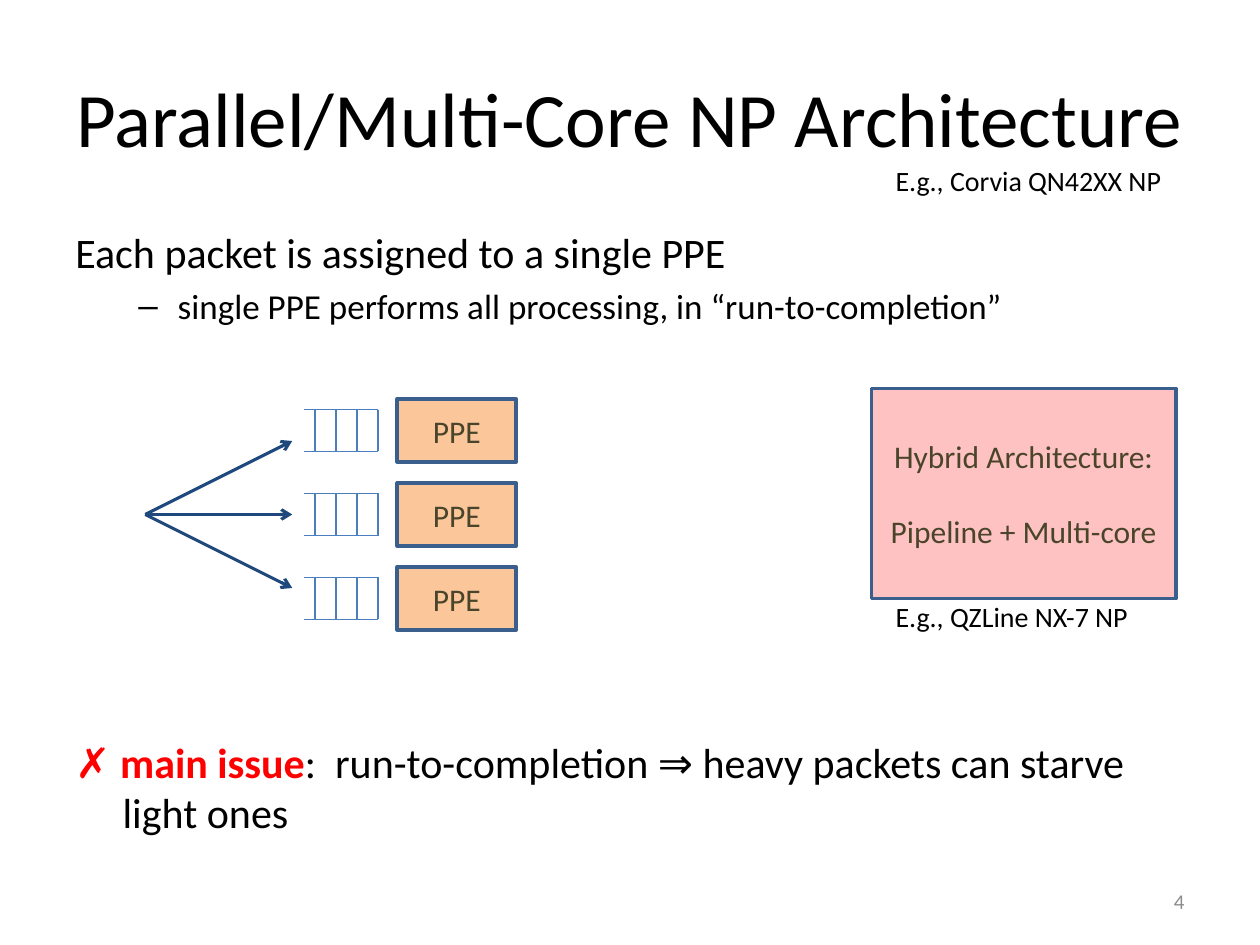
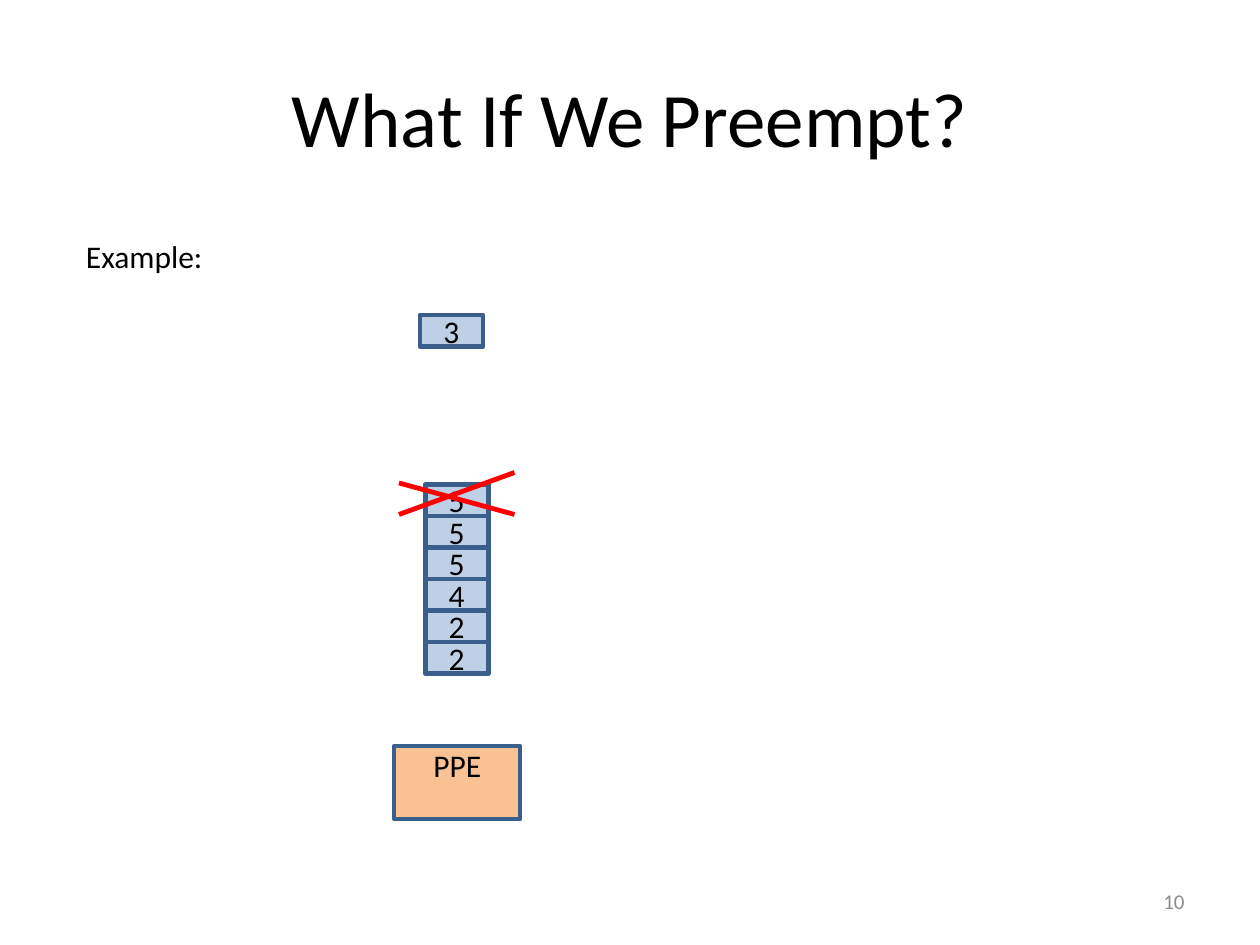
import lxml.etree
import pptx
import pptx.dml.color
import pptx.enum.shapes
import pptx.enum.text
import pptx.oxml.ns
import pptx.util

Pt = pptx.util.Pt
qn = pptx.oxml.ns.qn
Align = pptx.enum.text.PP_ALIGN
Anchor = pptx.enum.text.MSO_ANCHOR
RECT = pptx.enum.shapes.MSO_SHAPE.RECTANGLE
STRAIGHT = pptx.enum.shapes.MSO_CONNECTOR.STRAIGHT

COLORS = {
    "ink": "000000",
    "olive": "4A452A",
    "grey": "8C8C8C",
    "red": "FF0000",
    "orange": "F79646",
    "blue": "4F81BD",
    "edge": "3A5F8C",
    "navy": "1F497D",
    "queue": "4B7EBC",
}


def rgb(name):
    return pptx.dml.color.RGBColor.from_string(COLORS[name])


class Deck:
    font = "Calibri"

    def __init__(self):
        self.prs = pptx.Presentation()
        self.prs.slide_width, self.prs.slide_height = Pt(720), Pt(540)
        self.slide = None

    def page(self, title, number):
        """Start a slide with its title and page number."""
        self.slide = self.prs.slides.add_slide(self.prs.slide_layouts[6])
        mid = {"vertical_anchor": Anchor.MIDDLE}
        self.text((36, 21.6, 648, 90), [title], 44, align=Align.CENTER, frame=mid)
        self.text((516, 500.5, 168, 28.75), [number], 12, "grey",
                  align=Align.RIGHT, frame=mid)

    def para(self, para, runs, size, color, align=Align.LEFT, before=0,
             indent=None, bullet=None):
        """Fill a paragraph; a run is a string or (string, colour, bold)."""
        for key, val in {"alignment": align, "space_before": Pt(before)}.items():
            setattr(para, key, val)
        if indent:
            props = para._p.get_or_add_pPr()
            for key, val in zip(("marL", "indent"), indent):
                props.set(key, str(Pt(val)))
            if bullet:
                lxml.etree.SubElement(props, qn("a:buFont")).set("typeface", "Arial")
                lxml.etree.SubElement(props, qn("a:buChar")).set("char", bullet)
        for item in [runs] if isinstance(runs, str) else runs:
            words, tint, bold = (item, color, False) if isinstance(item, str) else item
            run = para.add_run()
            run.text = words
            for key, val in {"name": self.font, "size": Pt(size), "bold": bold}.items():
                setattr(run.font, key, val)
            run.font.color.rgb = rgb(tint)

    def fill(self, shape, paras, size, color, align, gap, frame):
        body = shape.text_frame
        for key, val in {"word_wrap": True, **frame}.items():
            setattr(body, key, val)
        for i, runs in enumerate(paras):
            para = body.add_paragraph() if i else body.paragraphs[0]
            self.para(para, runs, size, color, align, gap if i else 0)

    def text(self, box, paras, size, color="ink", align=Align.LEFT, frame={}):
        shape = self.slide.shapes.add_textbox(*map(Pt, box))
        self.fill(shape, paras, size, color, align, 0, frame)
        return shape.text_frame

    def rect(self, box, paras, fill, alpha, color="ink", width=2, gap=0,
             frame={"vertical_anchor": Anchor.MIDDLE}):
        """Draw a see-through box; alpha is its opacity in percent."""
        shape = self.slide.shapes.add_shape(RECT, *map(Pt, box))
        shape.shadow.inherit = False
        shape.fill.solid()
        shape.fill.fore_color.rgb = rgb(fill)
        tint = shape.element.spPr.find(qn("a:solidFill"))[0]
        lxml.etree.SubElement(tint, qn("a:alpha")).set("val", str(alpha * 1000))
        shape.line.color.rgb = rgb("edge")
        shape.line.width = Pt(width)
        self.fill(shape, paras, 18, color, Align.CENTER, gap, frame)

    def line(self, start, end, color, width=0.75, arrow=False):
        link = self.slide.shapes.add_connector(STRAIGHT, *map(Pt, start + end))
        link.line.color.rgb = rgb(color)
        link.line.width = Pt(width)
        props = link.element.spPr
        if arrow:
            lxml.etree.SubElement(props.find(qn("a:ln")), qn("a:tailEnd")).set("type", "arrow")
        lxml.etree.SubElement(props, qn("a:effectLst"))

    def queue(self, top):
        """Draw a packet queue that is open on the left."""
        left, right, low = 174, 216, top + 24
        for y in (top, low):
            self.line((left, y), (right, y), "queue")
        for x in range(right, left, -12):
            self.line((x, top), (x, low), "queue")


def cores(deck):
    deck.page("Parallel/Multi-Core NP Architecture", "4")
    body = deck.text((36, 126, 648, 75), ["Each packet is assigned to a single PPE"], 24)
    deck.para(body.add_paragraph(),
              "single PPE performs all processing, in “run-to-completion”",
              20, "ink", before=4, indent=(58.5, -22.5), bullet="–")
    issue = deck.text((36, 417.3, 648, 66), [], 24)
    deck.para(issue.paragraphs[0],
              [("✗ ", "red", False), ("main issue", "red", True),
               ":  run-to-completion ⇒ heavy packets can starve light ones"],
              24, "ink", indent=(27, -27))

    for lane in range(3):
        top = 228 + 48 * lane
        deck.rect((227, top, 68, 36), ["PPE"], "orange", 54, "olive")
        deck.line((83, 294), (167, 252 + 42 * lane), "navy", 1.75, arrow=True)
        deck.queue(top + 6)

    deck.rect((498, 222, 174, 120), ["Hybrid Architecture:", "Pipeline + Multi-core"],
              "red", 24, "olive", gap=21)
    for top, chip in ((90, "Corvia QN42XX NP"), (339, "QZLine NX-7 NP")):
        deck.text((504.75, top, 180, 26.5), ["E.g., " + chip], 16)


def preempt(deck):
    deck.page("What If We Preempt?", "10")
    deck.rect((225.3, 426.2, 72, 42), ["PPE"], "orange", 58,
              frame={"vertical_anchor": Anchor.TOP, "margin_top": 0})

    left, top, wide, high = 243, 276.9, 36, 18
    stack = ["5", "5", "5", "4", "2", "2"]
    right, floor = left + wide, top + high * len(stack)
    for start, end in (((left, 276), (left, floor)), ((right, 276), (right, floor)),
                       ((left, floor), (right, floor))):
        deck.line(start, end, "ink")
    spots = [(left, top + high * i, work) for i, work in enumerate(stack)]
    for x, y, work in spots[::-1] + [(240, 180, "3")]:
        deck.rect((x, y, wide, high), [work], "blue", 37, width=2.75)

    for start, end in ((294, 270), (276, 294)):
        deck.line((228, start), (294, end), "red", 2.75)
    deck.text((42, 132, 90, 29), ["Example:"], 18)


def main():
    deck = Deck()
    cores(deck)
    preempt(deck)
    deck.prs.save("out.pptx")


if __name__ == "__main__":
    main()
